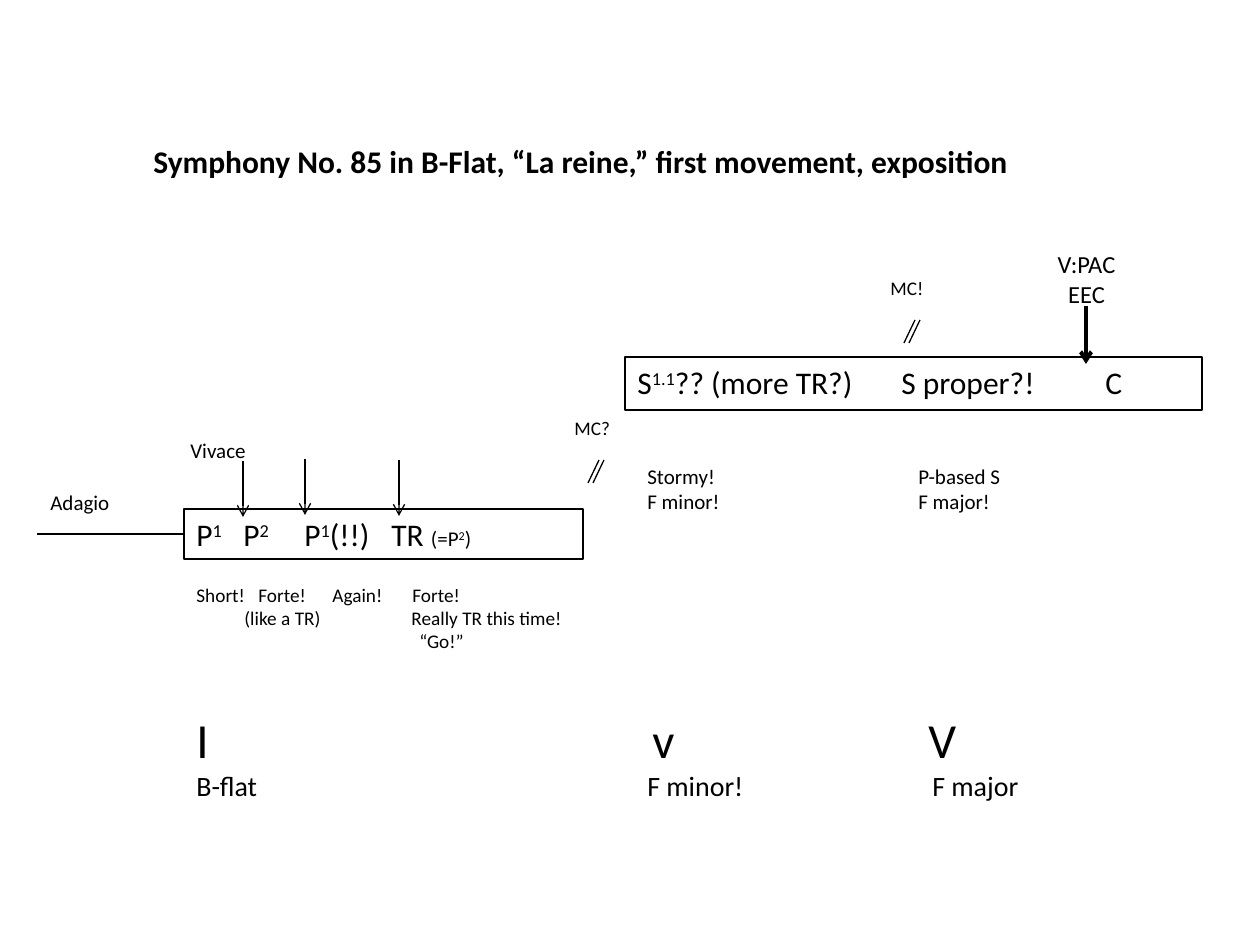
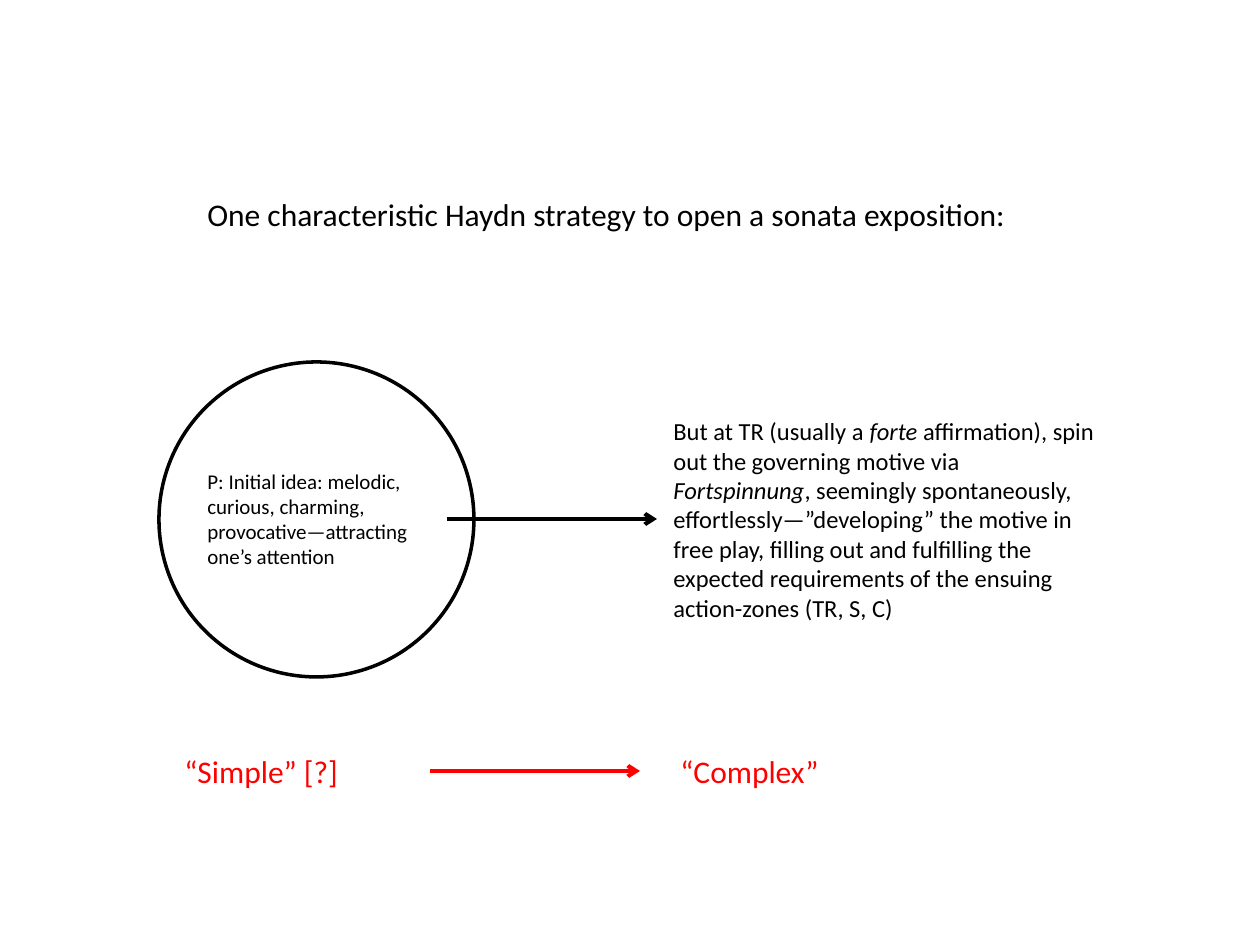
from dataclasses import dataclass

from lxml import etree
from pptx import Presentation
from pptx import util as u
from pptx.dml.color import RGBColor
from pptx.enum import shapes, text
from pptx.oxml.ns import qn

PX_PER_INCH = 126


@dataclass(frozen=True)
class Theme:
    font: str = "Calibri"
    ink: str = "000000"
    accent: str = "FF0000"
    numeral: int = 28
    title: int = 18
    key: int = 16
    body: int = 14
    label: int = 12
    note: int = 11
    thin: float = 0.75
    medium: float = 1.5
    ring: float = 2
    bold: float = 2.25


THEME = Theme()


@dataclass(frozen=True)
class Span:
    text: str
    raised: bool = False
    italic: bool = False
    size: int = 0


@dataclass(frozen=True)
class Line:
    """One paragraph: strings and Spans, with tab stops in px from the text edge."""
    spans: tuple
    tabs: tuple = ()
    size: int = 0


def sup(value, size=0):
    return Span(value, raised=True, size=size)


def px(n):
    return u.Emu(round(n * 914400 / PX_PER_INCH))


def rgb(value):
    return RGBColor.from_string(value)


def add_tabs(p, tabs):
    tab_list = etree.SubElement(p._p.get_or_add_pPr(), qn("a:tabLst"))
    for stop in tabs:
        etree.SubElement(tab_list, qn("a:tab"), pos=str(px(stop)), algn="l")


def add_run(p, item):
    span = item if isinstance(item, Span) else Span(item)
    r = p.add_run()
    r.text = span.text
    if span.size:
        r.font.size = u.Pt(span.size)
    if span.italic:
        r.font.italic = True
    if span.raised:
        r._r.get_or_add_rPr().set("baseline", "30000")


def write(sp, lines, size, color=THEME.ink, bold=False, align=text.PP_ALIGN.LEFT):
    tf = sp.text_frame
    tf.word_wrap = True
    tf.auto_size = text.MSO_AUTO_SIZE.SHAPE_TO_FIT_TEXT
    tf.vertical_anchor = text.MSO_ANCHOR.TOP
    for i, line in enumerate(lines):
        if isinstance(line, str):
            line = Line((line,))
        p = tf.paragraphs[0] if i == 0 else tf.add_paragraph()
        p.alignment = align
        if line.tabs:
            add_tabs(p, line.tabs)
        p.font.name = THEME.font
        p.font.size = u.Pt(line.size or size)
        p.font.bold = bold
        p.font.color.rgb = rgb(color)
        for item in line.spans:
            add_run(p, item)


def add_text(s, box, lines, size, **style):
    write(s.shapes.add_textbox(*map(px, box)), lines, size, **style)


def add_outline(s, kind, box, weight):
    sp = s.shapes.add_shape(kind, *map(px, box))
    sp.shadow.inherit = False
    sp.fill.background()
    sp.line.color.rgb = rgb(THEME.ink)
    sp.line.width = u.Pt(weight)
    return sp


def add_zone_box(s, box, line):
    """Framed row of action-zone symbols."""
    sp = add_outline(s, shapes.MSO_SHAPE.RECTANGLE, box, THEME.thin)
    write(sp, [line], THEME.title)


def add_line(s, start, end, weight, color=THEME.ink, arrow=False):
    c = s.shapes.add_connector(shapes.MSO_CONNECTOR.STRAIGHT,
                               *map(px, (*start, *end)))
    c.line.color.rgb = rgb(color)
    c.line.width = u.Pt(weight)
    if arrow:
        ln = c._element.spPr.find(qn("a:ln"))
        etree.SubElement(ln, qn("a:tailEnd"), type="arrow")
    etree.SubElement(c._element.spPr, qn("a:effectLst"))


def add_caesura(s, x, y, label):
    """Medial caesura: a label above a double slash whose left foot is at x."""
    add_text(s, (x - 26, y - 50, 73, 36), [label], THEME.note)
    for shift in (0, 5):
        add_line(s, (x + 11 + shift, y), (x + shift, y + 23), THEME.thin)


def exposition_slide(s):
    add_text(s, (141, 136, 924, 50),
             ["Symphony No. 85 in B-Flat, “La reine,” first movement, exposition"],
             THEME.title, bold=True)

    add_zone_box(s, (184, 509, 399, 50), Line(
        ("P", sup("1"), "\tP", sup("2"), "\tP", sup("1"), "(!!)\tTR ",
         Span("(=P", size=THEME.label), sup("2", THEME.label),
         Span(")", size=THEME.label)), tabs=(47, 108, 195)))
    add_zone_box(s, (625, 357, 577, 53), Line(
        ("S", sup("1.1"), "?? (more TR?)\tS proper?!\tC"), tabs=(264, 468)))

    add_text(s, (1044, 243, 85, 72), ["V:PAC", "EEC"], THEME.body,
             align=text.PP_ALIGN.CENTER)
    add_line(s, (1086, 306), (1086, 364), THEME.bold, arrow=True)

    add_text(s, (38, 483, 94, 38), ["Adagio"], THEME.label)
    add_line(s, (37, 534), (184, 534), THEME.medium)
    add_text(s, (178, 431, 86, 38), ["Vivace"], THEME.label)

    add_text(s, (184, 577, 420, 83), [
        Line(("Short!\tForte!\tAgain!\tForte!",), tabs=(62, 136, 216)),
        Line(("\t(like a TR)\tReally TR this time!",), tabs=(48, 215)),
        Line(("\t“Go!”",), tabs=(223,)),
    ], THEME.note)
    add_text(s, (635, 457, 567, 63), [
        Line(("Stormy!\tP-based S",), tabs=(271,)),
        Line(("F minor!\tF major!",), tabs=(271,)),
    ], THEME.label)

    add_caesura(s, 588, 460, "MC?")
    add_caesura(s, 904, 320, "MC!")

    add_text(s, (184, 703, 935, 106), [
        Line(("I\tv\tV",), tabs=(456, 732)),
        Line(("B-flat\tF minor!\tF major",), tabs=(451, 736), size=THEME.key),
    ], THEME.numeral)

    for x, y in ((243, 461), (305, 459), (399, 460)):
        add_line(s, (x, y), (x, y + 56), THEME.thin, arrow=True)


def strategy_slide(s):
    add_outline(s, shapes.MSO_SHAPE.OVAL, (159, 362, 315, 315), THEME.ring)
    add_text(s, (195, 462, 262, 115), [
        "P: Initial idea: melodic,",
        "curious, charming,",
        "provocative—attracting one’s attention",
    ], THEME.label)
    add_line(s, (447, 519), (657, 519), THEME.bold, arrow=True)
    add_text(s, (661, 410, 447, 220), [Line((
        "But at TR (usually a ", Span("forte", italic=True),
        " affirmation), spin out the governing motive via ",
        Span("Fortspinnung", italic=True),
        ", seemingly spontaneously, effortlessly—”developing” the motive in "
        "free play, filling out and fulfilling the expected requirements of "
        "the ensuing action-zones (TR, S, C)"))], THEME.body)

    add_text(s, (195, 189, 872, 50),
             ["One characteristic Haydn strategy to open a sonata exposition:"],
             THEME.title)

    add_text(s, (172, 746, 930, 50),
             [Line(("“Simple” [?]\t“Complex”",), tabs=(496,))],
             THEME.title, color=THEME.accent)
    add_line(s, (430, 771), (640, 771), THEME.bold, THEME.accent, arrow=True)


def main():
    prs = Presentation()
    prs.slide_width, prs.slide_height = u.Inches(10), u.Inches(7.5)
    blank = prs.slide_layouts[6]
    for build in (exposition_slide, strategy_slide):
        build(prs.slides.add_slide(blank))
    prs.save("out.pptx")


if __name__ == "__main__":
    main()
